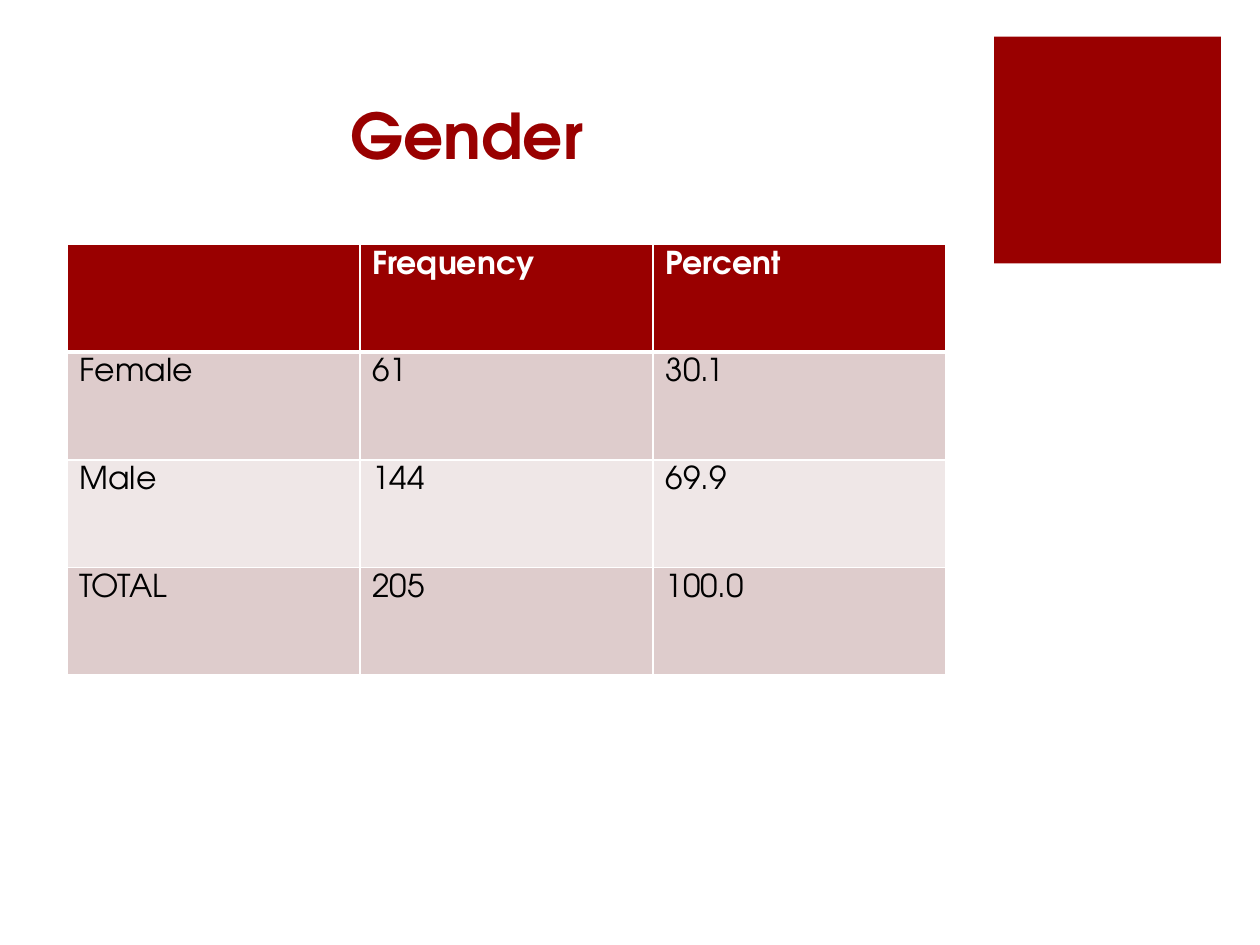
from lxml import etree
from pptx import Presentation
from pptx.dml.color import RGBColor
from pptx.enum import shapes, text
from pptx.oxml.ns import qn
from pptx.util import Inches, Pt

FONT = "TeX Gyre Adventor"
RED, WHITE, BLACK = "990000", "FFFFFF", "000000"
BANDS = ("DECCCC", "EFE7E7")
ROWS = (
    ("", "Frequency", "Percent"),
    ("Female", "61", "30.1"),
    ("Male", "144", "69.9"),
    ("TOTAL", "205", "100.0"),
)


def color(value):
    return RGBColor.from_string(value)


def paint(target, value):
    target.fill.solid()
    target.fill.fore_color.rgb = color(value)


def write(frame, content, size=18, fill=BLACK, bold=False):
    paragraph = frame.paragraphs[0]
    paragraph.alignment = text.PP_ALIGN.LEFT
    paragraph.font.size = Pt(size)
    if not content:
        return
    run = paragraph.add_run()
    run.text = content
    run.font.name = FONT
    run.font.size = Pt(size)
    run.font.bold = bold
    run.font.color.rgb = color(fill)


def set_borders(cell, bottom=1):
    """Draw white borders, which must precede the fill in the cell properties."""
    properties = cell._tc.get_or_add_tcPr()
    widths = {"a:lnL": 1, "a:lnR": 1, "a:lnT": 1, "a:lnB": bottom}
    for tag, width in widths.items():
        line = etree.SubElement(properties, qn(tag), w=str(Pt(width)))
        solid = etree.SubElement(line, qn("a:solidFill"))
        etree.SubElement(solid, qn("a:srgbClr"), val=WHITE)


def add_title(slide, content):
    title = slide.shapes.title
    title.left, title.top = Inches(2.68), Inches(0.8)
    title.width, title.height = Inches(7.12), Inches(0.62)
    frame = title.text_frame
    frame.vertical_anchor = text.MSO_ANCHOR.BOTTOM
    frame.auto_size = text.MSO_AUTO_SIZE.NONE
    write(frame, content, size=36, fill=RED, bold=True)


def add_corner_square(slide):
    """Place the accent square behind the title."""
    side = Inches(1.8)
    square = slide.shapes.add_shape(
        shapes.MSO_SHAPE.RECTANGLE, Inches(7.89), Inches(0.29), side, side)
    square.shadow.inherit = False
    paint(square, RED)
    square.line.fill.background()
    slide.shapes.title._element.addprevious(square._element)


def add_gender_table(slide):
    table = slide.shapes.add_table(
        len(ROWS), len(ROWS[0]), Inches(0.53), Inches(1.94),
        Inches(6.98), Inches(3.42)).table
    for row_index, row in enumerate(ROWS):
        header = row_index == 0
        for column_index, content in enumerate(row):
            cell = table.cell(row_index, column_index)
            cell.margin_left = cell.margin_right = Inches(0.1)
            cell.margin_top = cell.margin_bottom = Inches(0.05)
            set_borders(cell, bottom=3 if header else 1)
            paint(cell, RED if header else BANDS[(row_index - 1) % 2])
            write(cell.text_frame, content,
                  fill=WHITE if header else BLACK, bold=header)


def main():
    presentation = Presentation()
    presentation.slide_width = Inches(10)
    presentation.slide_height = Inches(7.5)
    slide = presentation.slides.add_slide(presentation.slide_layouts[5])
    add_title(slide, "Gender")
    add_corner_square(slide)
    add_gender_table(slide)
    presentation.save("out.pptx")


if __name__ == "__main__":
    main()
